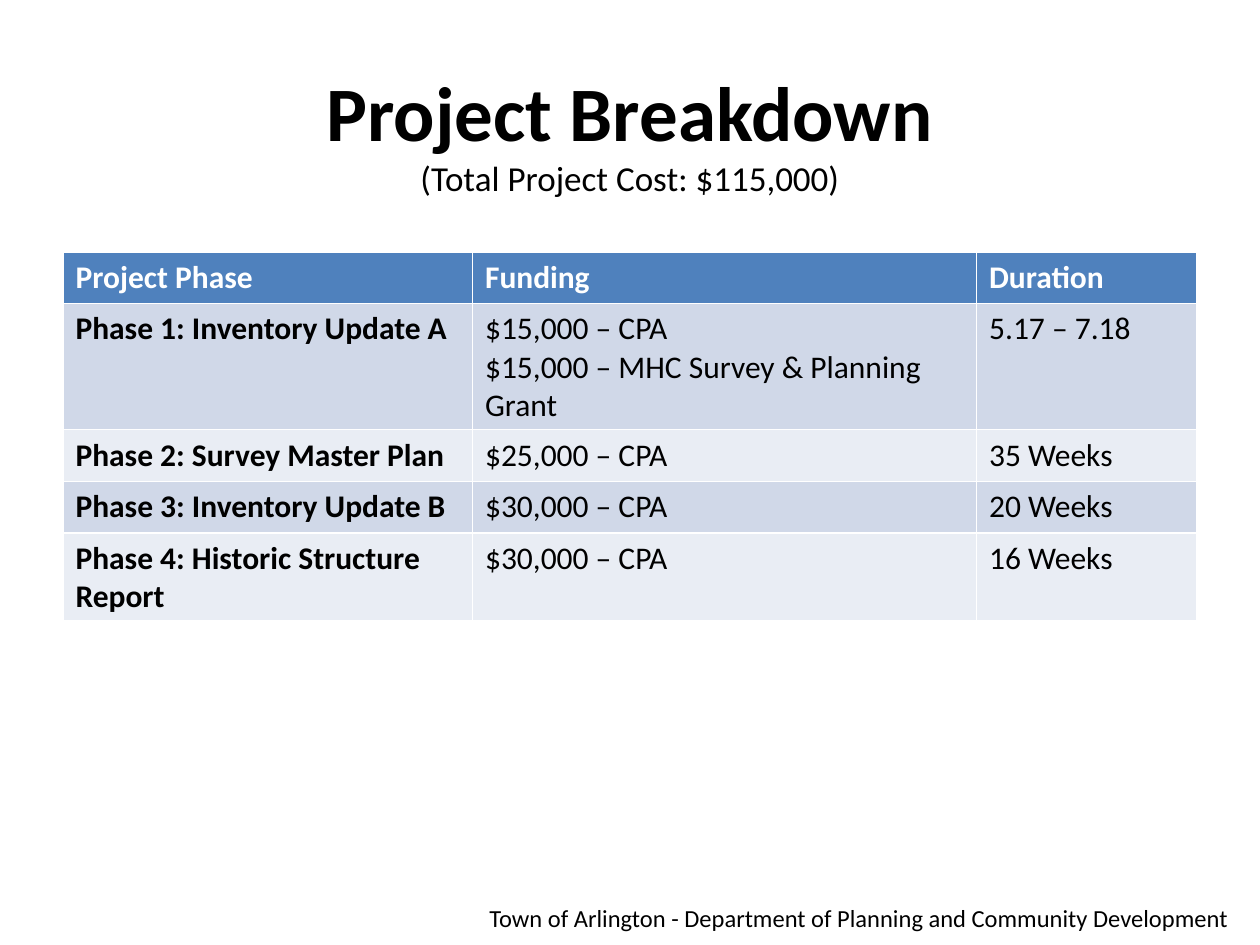
from pptx import Presentation
from pptx.dml.color import RGBColor
from pptx.enum.text import MSO_ANCHOR, MSO_AUTO_SIZE, PP_ALIGN
from pptx.util import Inches, Pt

CENTER, RIGHT = PP_ALIGN.CENTER, PP_ALIGN.RIGHT
MIDDLE, NO_FIT = MSO_ANCHOR.MIDDLE, MSO_AUTO_SIZE.NONE
BLACK = RGBColor(0x00, 0x00, 0x00)
WHITE = RGBColor(0xFF, 0xFF, 0xFF)
BLUE = RGBColor(0x4F, 0x81, 0xBD)
BANDS = RGBColor(0xE9, 0xED, 0xF4), RGBColor(0xD0, 0xD8, 0xE8)

# Content
TITLE = "Project Breakdown"
COST = "(Total Project Cost: $115,000)"
FOOTER = "Town of Arlington - Department of Planning and Community Development"
ROWS = [
    ("Project Phase", "Funding", "Duration"),
    ("Phase 1: Inventory Update A",
     "$15,000 – CPA\n$15,000 – MHC Survey & Planning Grant", "5.17 – 7.18"),
    ("Phase 2: Survey Master Plan", "$25,000 – CPA", "35 Weeks"),
    ("Phase 3: Inventory Update B", "$30,000 – CPA", "20 Weeks"),
    ("Phase 4: Historic Structure Report", "$30,000 – CPA", "16 Weeks"),
]

# Layout
WIDTH, HEIGHT = Inches(10), Inches(7.5)
MARGIN = Inches(0.5)
INNER = WIDTH - 2 * MARGIN
COLS = [Inches(w) for w in (3.25, 4, 1.75)]
ROW = Inches(0.41)


def style(run, size, bold=False, color=BLACK):
    look = {"name": "Calibri", "size": Pt(size), "bold": bold}
    for key, value in look.items():
        setattr(run.font, key, value)
    run.font.color.rgb = color


def place(shape, *box):
    for key, value in zip(("left", "top", "width", "height"), box):
        setattr(shape, key, value)


deck = Presentation()
deck.slide_width, deck.slide_height = WIDTH, HEIGHT
slide = deck.slides.add_slide(deck.slide_layouts[5])

# Footer
box = slide.shapes.add_textbox(Inches(2.1), Inches(7.12), Inches(7.75), Inches(0.34))
box.text_frame.word_wrap = True
para = box.text_frame.paragraphs[0]
para.alignment = RIGHT
run = para.add_run()
run.text = FOOTER
style(run, 14)

# Phase table
frame = slide.shapes.add_table(len(ROWS), len(COLS), MARGIN, Inches(2),
                               INNER, ROW * len(ROWS))
table = frame.table
for col, width in zip(table.columns, COLS):
    col.width = width
for r, texts in enumerate(ROWS):
    table.rows[r].height = ROW
    head = r == 0
    for c, text in enumerate(texts):
        cell = table.cell(r, c)
        cell.fill.solid()
        cell.fill.fore_color.rgb = BLUE if head else BANDS[r % 2]
        cell.text = text
        for para in cell.text_frame.paragraphs:
            style(para.runs[0], 18, head or c == 0, WHITE if head else BLACK)

# Title with the total cost below it
title = slide.shapes.title
place(title, MARGIN, Inches(0.17), INNER, Inches(1.75))
title.text_frame.auto_size = NO_FIT
title.text_frame.vertical_anchor = MIDDLE
para = title.text_frame.paragraphs[0]
para.alignment = CENTER
run = para.add_run()
run.text = TITLE
style(run, 44, True)
para.add_line_break()
run = para.add_run()
run.text = COST
style(run, 20)

deck.save("out.pptx")
